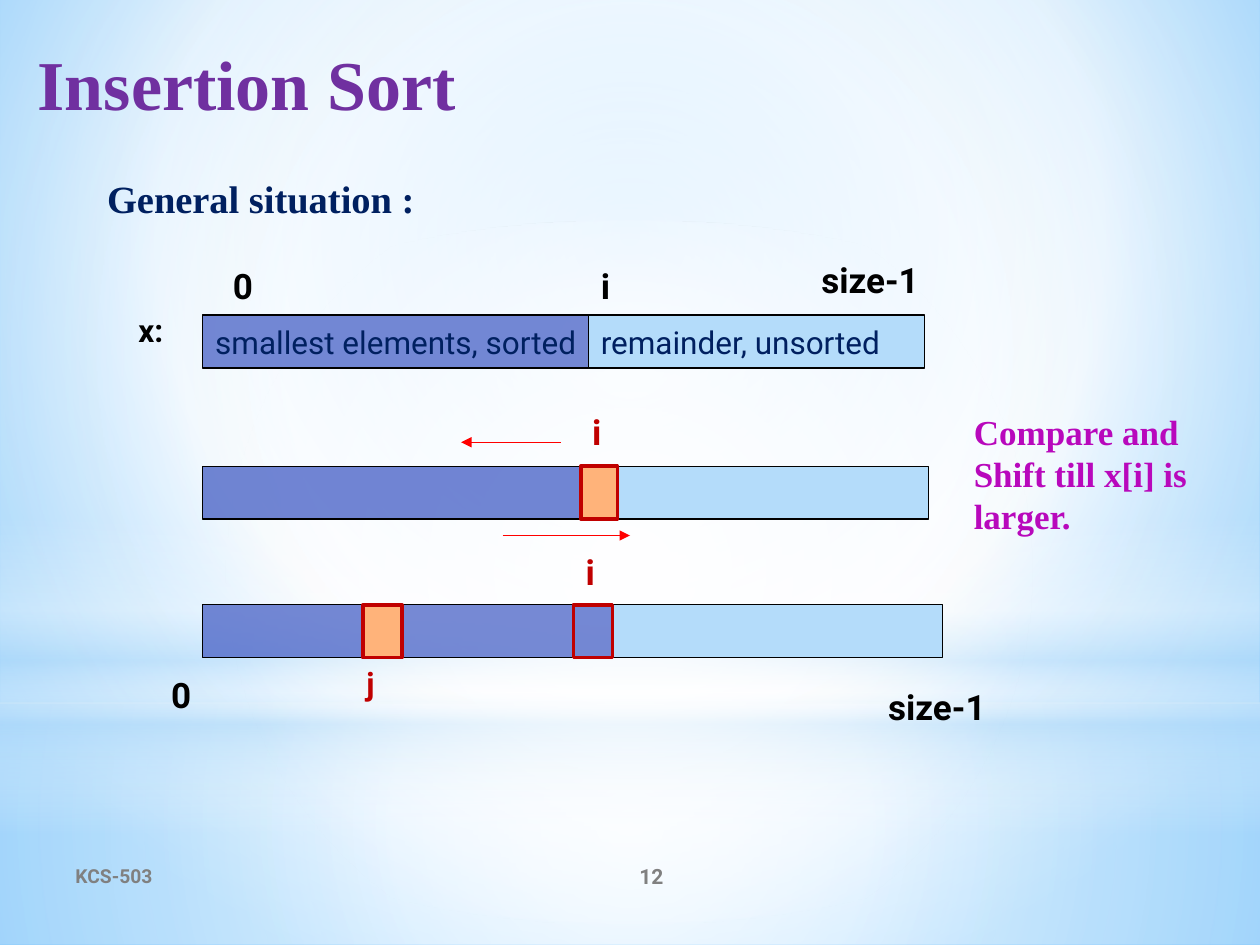
from lxml import etree
from pptx import Presentation
from pptx.dml.color import RGBColor
from pptx.enum.shapes import MSO_CONNECTOR, MSO_SHAPE
from pptx.enum.text import MSO_ANCHOR, MSO_AUTO_SIZE, PP_ALIGN
from pptx.oxml.ns import qn
from pptx.util import Inches, Pt

COLORS = {
    "title": "7030A0", "heading": "002060", "footer": "808080",
    "black": "000000", "index": "C00000", "note": "B808BC",
    "sorted": "4E67C8", "unsorted": "B4DCFA", "current": "FFB37A",
    "arrow": "FF0000", "white": "FFFFFF", "sky": "9ED5FF", "deep_sky": "5BB9FF",
}
SERIF, SANS = "Times New Roman", "Roboto"
BAR_LEFT, BAR_HEIGHT = 1.61, 0.42

TITLE = "Insertion Sort"
HEADING = "General situation :"
NOTE = ["Compare and", "Shift till x[i] is", "larger."]

# stops: position %, colour, opacity %; focus: left, top, right, bottom %
BACKGROUND = ([(0, "sky", 100), (60, "white", 100), (100, "deep_sky", 100)], (20, 10, 20, 60))
CENTRE = (50, 50, 50, 50)
GLOWS = [  # preset, top, height, stops, focus (None: runs top to bottom)
    (MSO_SHAPE.RECTANGLE, 5.58, 1.92,
     [(0, "white", 91), (37, "white", 76), (100, "unsorted", 79)], CENTRE),
    (MSO_SHAPE.RECTANGLE, 0, 5.58,
     [(0, "white", 89), (48, "white", 62), (100, "unsorted", 79)], CENTRE),
    (MSO_SHAPE.RECTANGLE, 4.12, 2.5,
     [(0, "white", 0), (29, "white", 30), (45, "unsorted", 40),
      (55, "white", 26), (65, "unsorted", 60), (100, "white", 0)], None),
    (MSO_SHAPE.OVAL, 1.75, 5.58, [(0, "white", 100), (56, "white", 0)], CENTRE),
]
BARS = [  # top, segments from left to right: width, fill, opacity %, outline, text
    (2.5, [(3.06, "sorted", 78, "black", "smallest elements, sorted"),
           (2.67, "unsorted", 100, "black", "remainder, unsorted")]),
    (3.7, [(2.99, "sorted", 80, "black", ""), (2.77, "unsorted", 100, "black", "")]),
    (4.8, [(1.27, "sorted", 78, "black", ""), (0.31, "current", 100, "index", ""),
           (1.36, "sorted", 77, "black", ""), (0.31, "sorted", 78, "index", ""),
           (2.62, "unsorted", 100, "black", "")]),
]
LABELS = [  # text, left, top, width, size, colour
    ("0", 1.75, 2.05, 0.38, 20, "black"),
    ("i", 4.67, 2.05, 0.28, 20, "black"),
    ("size-1", 6.42, 2, 1.43, 20, "black"),
    ("x:", 1, 2.42, 0.52, 18, "black"),
    ("i", 4.6, 3.21, 0.28, 20, "index"),
    ("i", 4.55, 4.32, 0.3, 20, "index"),
    ("j", 2.81, 5.22, 0.3, 18, "index"),
    ("0", 1.26, 5.3, 0.39, 20, "black"),
    ("size-1", 6.95, 5.39, 1.49, 20, "black"),
]
ARROWS = [(4.45, 3.66, 3.51), (3.99, 5, 4.25)]  # from x, to x, y
FOOTERS = [("KCS-503", 0.5, 3.67, 11, PP_ALIGN.LEFT), ("12", 4.17, 2, 12, PP_ALIGN.CENTER)]


def rgb(name):
    return RGBColor.from_string(COLORS[name])


def add_alpha(color, opacity):
    etree.SubElement(color, qn("a:alpha"), val=str(opacity * 1000))


def set_gradient(fill, properties, stops, focus):
    """Give a shape's or background's properties element a gradient with opacities."""
    fill.background()
    gradient = etree.Element(qn("a:gradFill"), rotWithShape="1")
    stop_list = etree.SubElement(gradient, qn("a:gsLst"))
    for position, name, opacity in stops:
        stop = etree.SubElement(stop_list, qn("a:gs"), pos=str(position * 1000))
        add_alpha(etree.SubElement(stop, qn("a:srgbClr"), val=COLORS[name]), opacity)
    if focus:
        shade = etree.SubElement(gradient, qn("a:path"), {"path": "circle"})
        sides = {side: str(part * 1000) for side, part in zip("ltrb", focus)}
        etree.SubElement(shade, qn("a:fillToRect"), sides)
    else:
        etree.SubElement(gradient, qn("a:lin"), ang="5400000", scaled="0")
    properties.replace(properties.find(qn("a:noFill")), gradient)


def place(shape, left, top, width, height):
    shape.left, shape.top = Inches(left), Inches(top)
    shape.width, shape.height = Inches(width), Inches(height)


def write(frame, text, size, color, font=SANS, bold=True, align=PP_ALIGN.LEFT):
    frame.text = text
    for paragraph in frame.paragraphs:
        paragraph.alignment = align
        for run in paragraph.runs:
            run.font.size, run.font.name, run.font.bold = Pt(size), font, bold
            run.font.color.rgb = rgb(color)


def set_indent(paragraph, left, first=0):
    properties = paragraph._p.get_or_add_pPr()
    properties.set("marL", str(Inches(left)))
    properties.set("indent", str(Inches(first)))


def add_text(slide, text, left, top, width, height, *style, **options):
    frame = slide.shapes.add_textbox(
        Inches(left), Inches(top), Inches(width), Inches(height)).text_frame
    write(frame, text, *style, **options)
    frame.word_wrap = True
    return frame


def add_segment(slide, left, top, width, fill, opacity, outline, text):
    segment = slide.shapes.add_shape(
        MSO_SHAPE.RECTANGLE, Inches(left), Inches(top), Inches(width), Inches(BAR_HEIGHT))
    segment.shadow.inherit = False
    segment.fill.solid()
    segment.fill.fore_color.rgb = rgb(fill)
    if opacity < 100:
        add_alpha(segment._element.spPr.find(f"{qn('a:solidFill')}/{qn('a:srgbClr')}"), opacity)
    segment.line.color.rgb = rgb(outline)
    segment.line.width = Pt(2 if outline == "index" else 0.75)
    if text:
        write(segment.text_frame, text, 18, "heading", bold=False)
        segment.text_frame.word_wrap = False
        segment.text_frame.vertical_anchor = MSO_ANCHOR.MIDDLE


def add_bar(slide, top, segments):
    """Lay segments end to end, drawing the red-outlined ones over the others."""
    placed, left = [], BAR_LEFT
    for segment in segments:
        placed.append((left, segment))
        left += segment[0]
    for left, segment in sorted(placed, key=lambda item: item[1][3] == "index"):
        add_segment(slide, left, top, *segment)


def add_arrow(slide, start, end, y):
    arrow = slide.shapes.add_connector(
        MSO_CONNECTOR.STRAIGHT, Inches(start), Inches(y), Inches(end), Inches(y))
    arrow.line.color.rgb = rgb("arrow")
    arrow.line.width = Pt(0.75)
    etree.SubElement(arrow.line._get_or_add_ln(), qn("a:tailEnd"), type="triangle")
    etree.SubElement(arrow._element.spPr, qn("a:effectLst"))


def main():
    prs = Presentation()
    prs.slide_width, prs.slide_height = Inches(10), Inches(7.5)
    slide = prs.slides.add_slide(prs.slide_layouts[1])

    backdrop = slide.background.fill
    backdrop.background()
    set_gradient(backdrop, slide.element.find(f".//{qn('p:bgPr')}"), *BACKGROUND)
    for preset, top, height, stops, focus in GLOWS:
        glow = slide.shapes.add_shape(preset, 0, Inches(top), Inches(10), Inches(height))
        glow.shadow.inherit = False
        glow.line.fill.background()
        set_gradient(glow.fill, glow._element.spPr, stops, focus)

    title, heading = slide.placeholders
    for placeholder in (title, heading):  # bring in front of the glows
        slide.shapes._spTree.append(placeholder._element)
        placeholder.text_frame.vertical_anchor = MSO_ANCHOR.TOP
    place(title, 0.2, 0.21, 9.53, 1.02)
    title.text_frame.margin_top = Inches(0.11)
    write(title.text_frame, TITLE, 40, "title", SERIF)
    place(heading, 0.7, 1.34, 8.5, 0.72)
    write(heading.text_frame, HEADING, 22, "heading", SERIF)
    situation = heading.text_frame.paragraphs[0]
    set_indent(situation, 0.05)
    situation.space_before, situation.space_after = Pt(4.4), Pt(3)
    etree.SubElement(situation._p.get_or_add_pPr(), qn("a:buNone"))

    for text, left, width, size, align in FOOTERS:
        footer = add_text(slide, text, left, 6.75, width, 0.4, size, "footer", align=align)
        footer.vertical_anchor = MSO_ANCHOR.MIDDLE
    for top, segments in BARS:
        add_bar(slide, top, segments)
    add_segment(slide, 4.61, 3.7, 0.29, "current", 100, "index", "")
    for text, left, top, width, size, color in LABELS:
        label = add_text(slide, text, left, top, width, 0.43, size, color)
        label.word_wrap = len(text) > 2
        label.auto_size = MSO_AUTO_SIZE.SHAPE_TO_FIT_TEXT
    for arrow in ARROWS:
        add_arrow(slide, *arrow)

    note = add_text(slide, "\n".join(NOTE), 7.13, 3.21, 2.48, 1.11, 20, "note", SERIF)
    for line in note.paragraphs:
        set_indent(line, 0.81, -0.31)

    prs.save("out.pptx")


if __name__ == "__main__":
    main()
